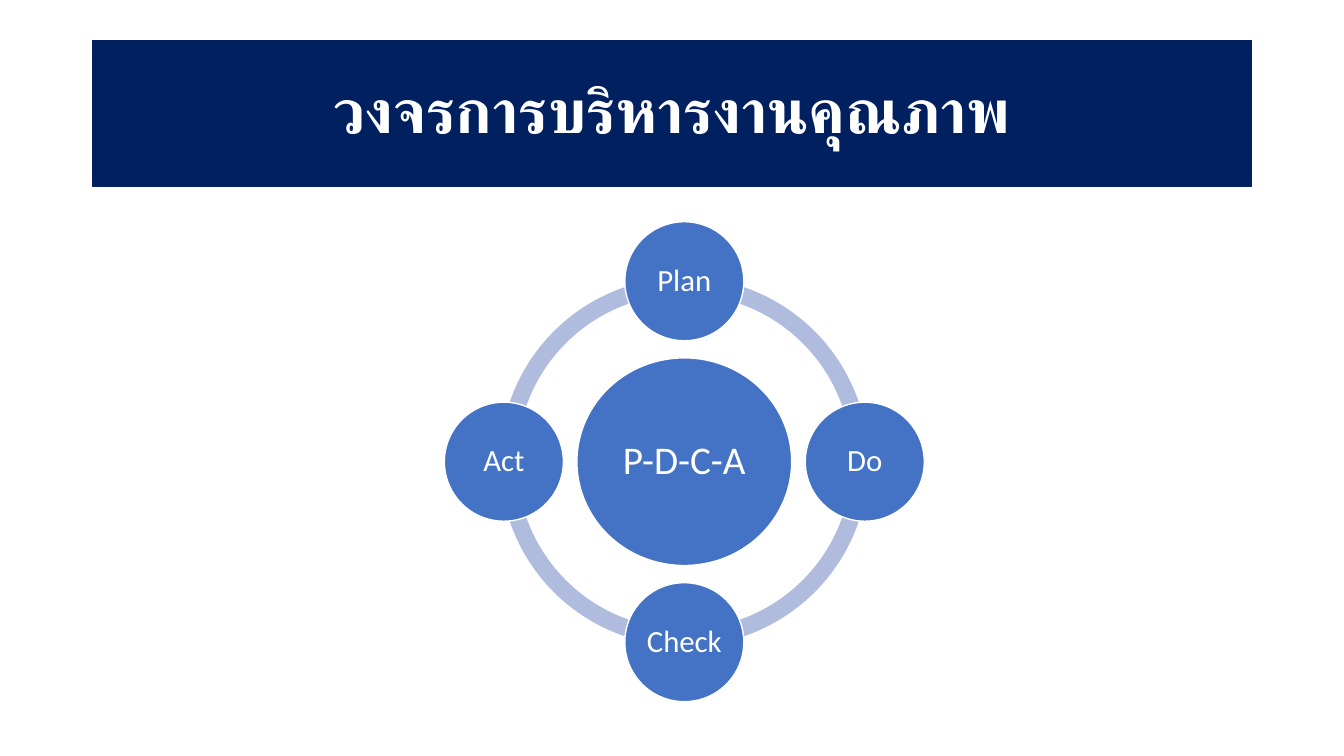
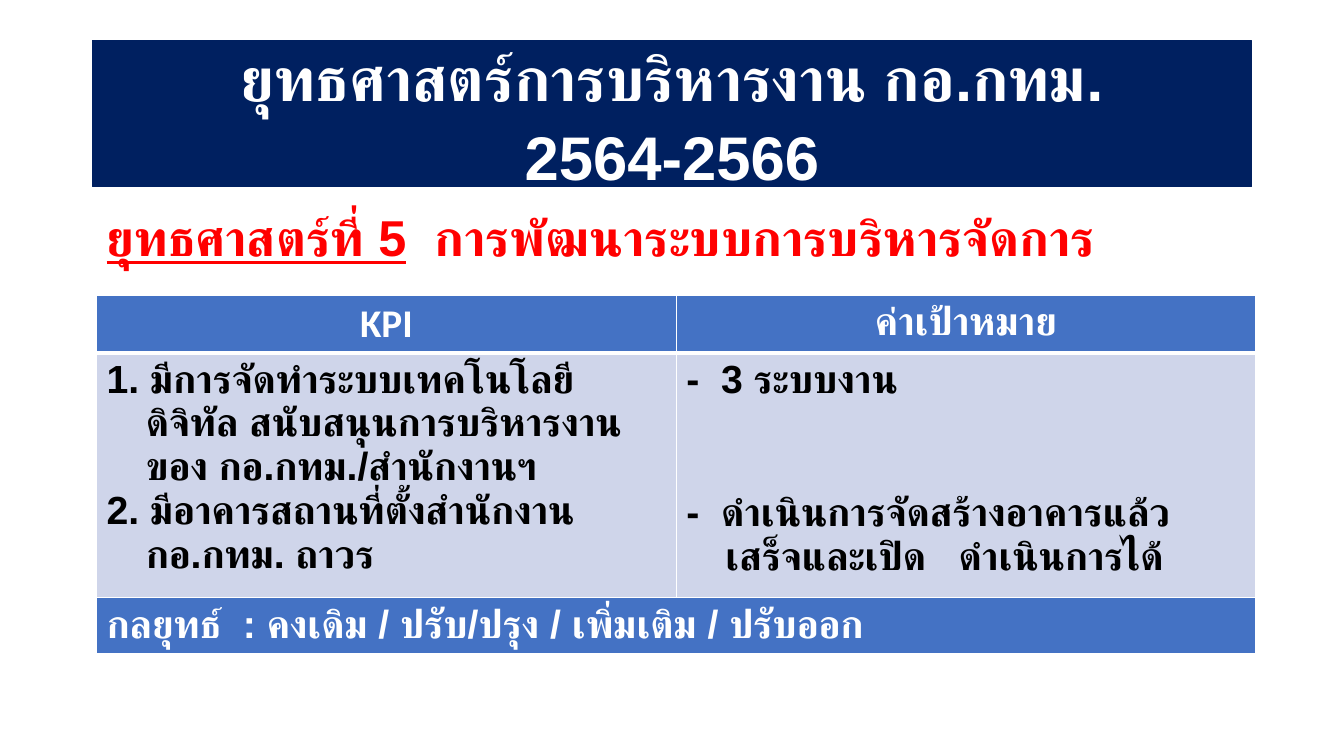
from dataclasses import dataclass
from math import cos, radians, sin

from lxml import etree
from pptx import Presentation
from pptx.dml import color as dml
from pptx.enum import shapes, text
from pptx.oxml import ns
from pptx.util import Pt

COLORS = {
    "navy": "002060",
    "blue": "4472C4",
    "ring": "B0BCDE",
    "pale": "CFD5EA",
    "red": "FF0000",
    "white": "FFFFFF",
    "black": "000000",
}
TITLE_ONLY = 5
MARGIN = 69
CONTENT_WIDTH = 828
CENTER_X, CENTER_Y = 488.8, 329.8
RING_SIZE = 263.5
RING_THICKNESS = 0.046
ORBIT_RADIUS = 128.9
HANGING = 28


@dataclass
class Circle:
    label: str
    x: float
    y: float
    width: float
    height: float
    size: float


@dataclass
class Cell:
    paragraphs: list[str]
    fill: str = "blue"
    color: str = "white"
    font: str = "Arial"
    centered: bool = False
    hanging: float = 0
    gap: float = 0
    bottom: float = 3


def rgb(name: str) -> dml.RGBColor:
    return dml.RGBColor.from_string(COLORS[name])


def paint(shape, fill: str, line: str | None = None, width: float = 1) -> None:
    shape.fill.solid()
    shape.fill.fore_color.rgb = rgb(fill)
    if line:
        shape.line.color.rgb = rgb(line)
        shape.line.width = Pt(width)
    else:
        shape.line.fill.background()


def style(para, size: float, color: str, font: str = "Arial", bold: bool = True) -> None:
    """Format a paragraph, giving Thai (complex script) text the same font."""
    para.font.size = Pt(size)
    para.font.bold = bold
    para.font.name = font
    para.font.color.rgb = rgb(color)
    properties = para._p.pPr.find(ns.qn("a:defRPr"))
    etree.SubElement(properties, ns.qn("a:cs"), typeface=font)


def add_titled_slide(deck, title: str, line_spacing: float, space_after: float = 0):
    slide = deck.slides.add_slide(deck.slide_layouts[TITLE_ONLY])
    band = slide.shapes.title
    band.left, band.top = Pt(66), Pt(29)
    band.width, band.height = Pt(CONTENT_WIDTH), Pt(104.4)
    paint(band, "navy", "navy", 0.75)
    frame = band.text_frame
    frame.text = title
    frame.word_wrap = True
    frame.auto_size = text.MSO_AUTO_SIZE.NONE
    frame.vertical_anchor = text.MSO_ANCHOR.MIDDLE
    para = frame.paragraphs[0]
    para.alignment = text.PP_ALIGN.CENTER
    para.line_spacing = line_spacing
    para.space_before = Pt(0)
    para.space_after = Pt(space_after)
    style(para, 44, "white")
    return slide


def add_ring_quarter(slide, start: int) -> None:
    arc = slide.shapes.add_shape(
        shapes.MSO_SHAPE.BLOCK_ARC,
        Pt(CENTER_X - RING_SIZE / 2),
        Pt(CENTER_Y - RING_SIZE / 2),
        Pt(RING_SIZE),
        Pt(RING_SIZE),
    )
    arc.shadow.inherit = False
    paint(arc, "ring")
    # One degree is 60000 angle units, which is 0.6 as an adjustment value.
    arc.adjustments[0] = start * 0.6
    arc.adjustments[1] = (start + 90) % 360 * 0.6
    arc.adjustments[2] = RING_THICKNESS


def add_circle(slide, circle: Circle) -> None:
    disc = slide.shapes.add_shape(
        shapes.MSO_SHAPE.OVAL,
        Pt(circle.x - circle.width / 2),
        Pt(circle.y - circle.height / 2),
        Pt(circle.width),
        Pt(circle.height),
    )
    disc.shadow.inherit = False
    paint(disc, "blue", "white")
    frame = disc.text_frame
    frame.text = circle.label
    frame.word_wrap = False
    frame.vertical_anchor = text.MSO_ANCHOR.MIDDLE
    frame.margin_left = frame.margin_right = Pt(2)
    frame.margin_top = frame.margin_bottom = Pt(2)
    para = frame.paragraphs[0]
    para.alignment = text.PP_ALIGN.CENTER
    para.line_spacing = 0.9
    style(para, circle.size, "white", "Calibri", bold=False)


def set_borders(cell, bottom: float) -> None:
    properties = cell._tc.get_or_add_tcPr()
    widths = {"a:lnL": 1, "a:lnR": 1, "a:lnT": 1, "a:lnB": bottom}
    for index, (tag, width) in enumerate(widths.items()):
        line = etree.Element(ns.qn(tag), w=str(Pt(width)))
        fill = etree.SubElement(line, ns.qn("a:solidFill"))
        etree.SubElement(fill, ns.qn("a:srgbClr"), val=COLORS["white"])
        properties.insert(index, line)


def fill_cell(cell, content: Cell) -> None:
    cell.fill.solid()
    cell.fill.fore_color.rgb = rgb(content.fill)
    set_borders(cell, content.bottom)
    frame = cell.text_frame
    frame.text = "\n".join(content.paragraphs)
    for index, para in enumerate(frame.paragraphs):
        if content.centered:
            para.alignment = text.PP_ALIGN.CENTER
        if content.hanging:
            properties = para._p.get_or_add_pPr()
            properties.set("marL", str(Pt(content.hanging)))
            properties.set("indent", str(-Pt(content.hanging)))
        if index and content.gap:
            para.space_before = Pt(content.gap)
        style(para, 28, content.color, content.font)


def add_grid(slide, top: float, heights: list[float], rows: list[list[Cell]]) -> None:
    columns = len(rows[0])
    table = slide.shapes.add_table(
        len(rows), columns, Pt(MARGIN), Pt(top), Pt(CONTENT_WIDTH), Pt(sum(heights))
    ).table
    for column in table.columns:
        column.width = Pt(CONTENT_WIDTH / columns)
    for r, (height, row) in enumerate(zip(heights, rows)):
        table.rows[r].height = Pt(height)
        for c, content in enumerate(row):
            fill_cell(table.cell(r, c), content)


def add_subtitle(slide, label: str, subject: str) -> None:
    box = slide.shapes.add_textbox(Pt(MARGIN), Pt(144), Pt(824.4), Pt(56.9))
    box.text_frame.word_wrap = True
    para = box.text_frame.paragraphs[0]
    para.space_after = Pt(8)
    style(para, 36, "red")
    for words, underlined in ((label, True), (subject, False)):
        span = para.add_run()
        span.text = words
        span.font.underline = underlined


def build_cycle_slide(deck) -> None:
    slide = add_titled_slide(deck, "วงจรการบริหารงานคุณภาพ", 0.9)
    for start in range(0, 360, 90):
        add_ring_quarter(slide, start)
    add_circle(slide, Circle("P-D-C-A", CENTER_X, CENTER_Y, 153.4, 148.3, 28))
    for index, label in enumerate(("Plan", "Do", "Check", "Act")):
        angle = radians(index * 90 - 90)
        x = CENTER_X + ORBIT_RADIUS * cos(angle)
        y = CENTER_Y + ORBIT_RADIUS * sin(angle)
        add_circle(slide, Circle(label, x, y, 85, 85, 22))


def build_strategy_slide(deck) -> None:
    slide = add_titled_slide(
        deck, "ยุทธศาสตร์การบริหารงาน กอ.กทม.\v2564-2566", 1.07, 8
    )
    add_subtitle(slide, "ยุทธศาสตร์ที่ 5", "  การพัฒนาระบบการบริหารจัดการ")
    indicators = [
        "1. มีการจัดทำระบบเทคโนโลยีดิจิทัล สนับสนุนการบริหารงานของ กอ.กทม./สำนักงานฯ",
        "2. มีอาคารสถานที่ตั้งสำนักงาน กอ.กทม. ถาวร",
    ]
    targets = [
        "-  3 ระบบงาน",
        "-  ดำเนินการจัดสร้างอาคารแล้วเสร็จและเปิด   ดำเนินการได้",
    ]
    body = {"fill": "pale", "color": "black", "hanging": HANGING, "bottom": 1}
    add_grid(
        slide,
        211,
        [41, 160],
        [
            [
                Cell(["KPI"], font="Calibri", centered=True),
                Cell(["ค่าเป้าหมาย"], centered=True),
            ],
            [Cell(indicators, **body), Cell(targets, gap=64, **body)],
        ],
    )
    strategy = "กลยุทธ์  : คงเดิม / ปรับ/ปรุง / เพิ่มเติม / ปรับออก"
    add_grid(slide, 427, [41], [[Cell([strategy])]])


def main() -> None:
    deck = Presentation()
    deck.slide_width, deck.slide_height = Pt(960), Pt(540)
    build_cycle_slide(deck)
    build_strategy_slide(deck)
    deck.save("out.pptx")


if __name__ == "__main__":
    main()
